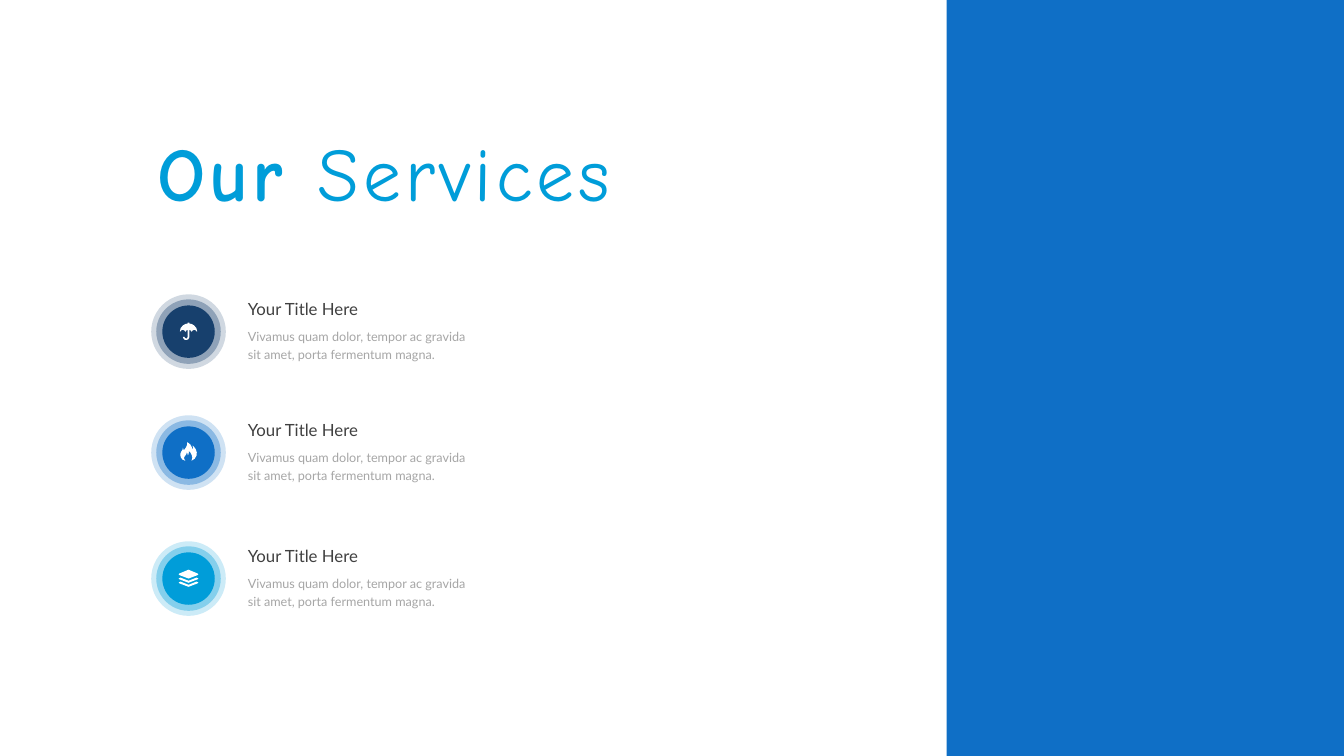
from lxml import etree
from pptx import Presentation
from pptx import util as u
from pptx.dml.color import RGBColor
from pptx.enum import shapes, text
from pptx.oxml import ns

NAVY = RGBColor(0x17, 0x40, 0x6D)
BLUE = RGBColor(0x0F, 0x6F, 0xC6)
CYAN = RGBColor(0x00, 0x9D, 0xD9)
WHITE = RGBColor(0xFF, 0xFF, 0xFF)
DARK_GREY = RGBColor(0x40, 0x40, 0x40)
LIGHT_GREY = RGBColor(0xA6, 0xA6, 0xA6)

BADGE_X = 1.87
TEXT_X = 2.36
RINGS = [(0.74, 20), (0.64, 35), (0.52, 100)]

UMBRELLA = [[
    (86, -2), (78, -35), (55, -62), (30, -76), (9, -80), (9, -90),
    (-9, -90), (-9, -80), (-30, -76), (-55, -62), (-78, -35), (-86, -2),
    (-82, 0), (-72, -12), (-57, -18), (-42, -12), (-32, 0), (-28, 0),
    (-20, -12), (-9, -18), (-9, 52), (-14, 66), (-24, 68), (-36, 64),
    (-40, 52), (-56, 52), (-50, 70), (-36, 82), (-18, 83), (0, 74),
    (9, 52), (9, -18), (20, -12), (28, 0), (32, 0), (42, -12),
    (57, -18), (72, -12), (82, 0),
]]
FLAME = [[
    (-32, 82), (-44, 60), (-42, 45), (-30, 28), (-20, 12), (-18, -4),
    (-10, 10), (-6, 28), (1, 14), (3, -2), (2, -18), (20, 0), (32, 25),
    (38, 52), (30, 82), (62, 60), (80, 30), (82, 0), (72, -32), (56, -55),
    (40, -70), (46, -50), (38, -28), (32, -55), (18, -80), (-12, -104),
    (-14, -75), (-26, -50), (-46, -22), (-56, -48), (-58, -30), (-72, -10),
    (-82, 15), (-78, 45), (-62, 68),
]]
SHEET_EDGE = [(-98, 0), (-80, -10), (0, 22), (80, -10), (98, 0),
              (90, 8), (0, 42), (-90, 8)]
LAYERS = [[(0, -88), (90, -50), (98, -42), (90, -34), (0, 0),
           (-90, -34), (-98, -42), (-90, -50)]]
LAYERS += [[(x, y + drop) for x, y in SHEET_EDGE] for drop in (0, 40)]

SERVICES = [(3.29, NAVY, UMBRELLA), (4.49, BLUE, FLAME), (5.74, CYAN, LAYERS)]
SERVICE_TITLE = "Your Title Here"
SERVICE_TEXT = ("Vivamus quam dolor, tempor ac gravida "
                "sit amet, porta fermentum magna.")


def paint(shape, color, opacity=100):
    shape.shadow.inherit = False
    shape.fill.solid()
    shape.fill.fore_color.rgb = color
    shape.line.fill.background()
    if opacity < 100:
        fill_color = shape.fill._xPr.find(ns.qn("a:solidFill"))[0]
        alpha = etree.SubElement(fill_color, ns.qn("a:alpha"))
        alpha.set("val", str(opacity * 1000))


def format_run(run, name, size, color, bold=False):
    run.font.name = name
    run.font.size = u.Pt(size)
    run.font.bold = bold
    run.font.color.rgb = color


def add_panel(slide):
    panel = slide.shapes.add_shape(
        shapes.MSO_SHAPE.RECTANGLE,
        u.Inches(9.39), u.Inches(0), u.Inches(3.94), u.Inches(7.5))
    paint(panel, BLUE)


def fill_title(slide):
    title = slide.shapes.title
    title.left, title.top = u.Inches(1.46), u.Inches(1.37)
    title.width, title.height = u.Inches(5.55), u.Inches(0.83)
    frame = title.text_frame
    frame.word_wrap = True
    frame.auto_size = text.MSO_AUTO_SIZE.SHAPE_TO_FIT_TEXT
    frame.vertical_anchor = text.MSO_ANCHOR.TOP
    paragraph = frame.paragraphs[0]
    paragraph.alignment = text.PP_ALIGN.LEFT
    paragraph.line_spacing = 0.8
    for words, bold in (("Our", True), (" Services", False)):
        run = paragraph.add_run()
        run.text = words
        format_run(run, "Comic Neue", 54, CYAN, bold)
        run.font._element.set("spc", "300")


def add_text(slide, top, width, height, words, size, color):
    box = slide.shapes.add_textbox(
        u.Inches(TEXT_X), u.Inches(top), u.Inches(width), u.Inches(height))
    frame = box.text_frame
    frame.word_wrap = True
    frame.auto_size = text.MSO_AUTO_SIZE.SHAPE_TO_FIT_TEXT
    frame.text = words
    paragraph = frame.paragraphs[0]
    paragraph.line_spacing = 1.2
    format_run(paragraph.runs[0], "Lato", size, color)


def add_icon(group, center_y, outlines):
    builder = group.shapes.build_freeform(*outlines[0][0], scale=u.Inches(0.001))
    for index, outline in enumerate(outlines):
        if index:
            builder.move_to(*outline[0])
        builder.add_line_segments(outline[1:], close=True)
    icon = builder.convert_to_shape(u.Inches(BADGE_X), u.Inches(center_y))
    paint(icon, WHITE)


def add_badge(slide, center_y, color, outlines):
    group = slide.shapes.add_group_shape()
    for diameter, opacity in RINGS:
        ring = group.shapes.add_shape(
            shapes.MSO_SHAPE.OVAL,
            u.Inches(BADGE_X - diameter / 2), u.Inches(center_y - diameter / 2),
            u.Inches(diameter), u.Inches(diameter))
        paint(ring, color, opacity)
    add_icon(group, center_y, outlines)


def main():
    presentation = Presentation()
    presentation.slide_width = u.Inches(13.33)
    presentation.slide_height = u.Inches(7.5)
    slide = presentation.slides.add_slide(
        presentation.slide_layouts.get_by_name("Title Only"))
    add_panel(slide)
    fill_title(slide)
    for center_y, color, outlines in SERVICES:
        add_text(slide, center_y - 0.42, 2.33, 0.35, SERVICE_TITLE, 12, DARK_GREY)
        add_text(slide, center_y - 0.11, 2.44, 0.46, SERVICE_TEXT, 9, LIGHT_GREY)
        add_badge(slide, center_y, color, outlines)
    presentation.save("out.pptx")


if __name__ == "__main__":
    main()
